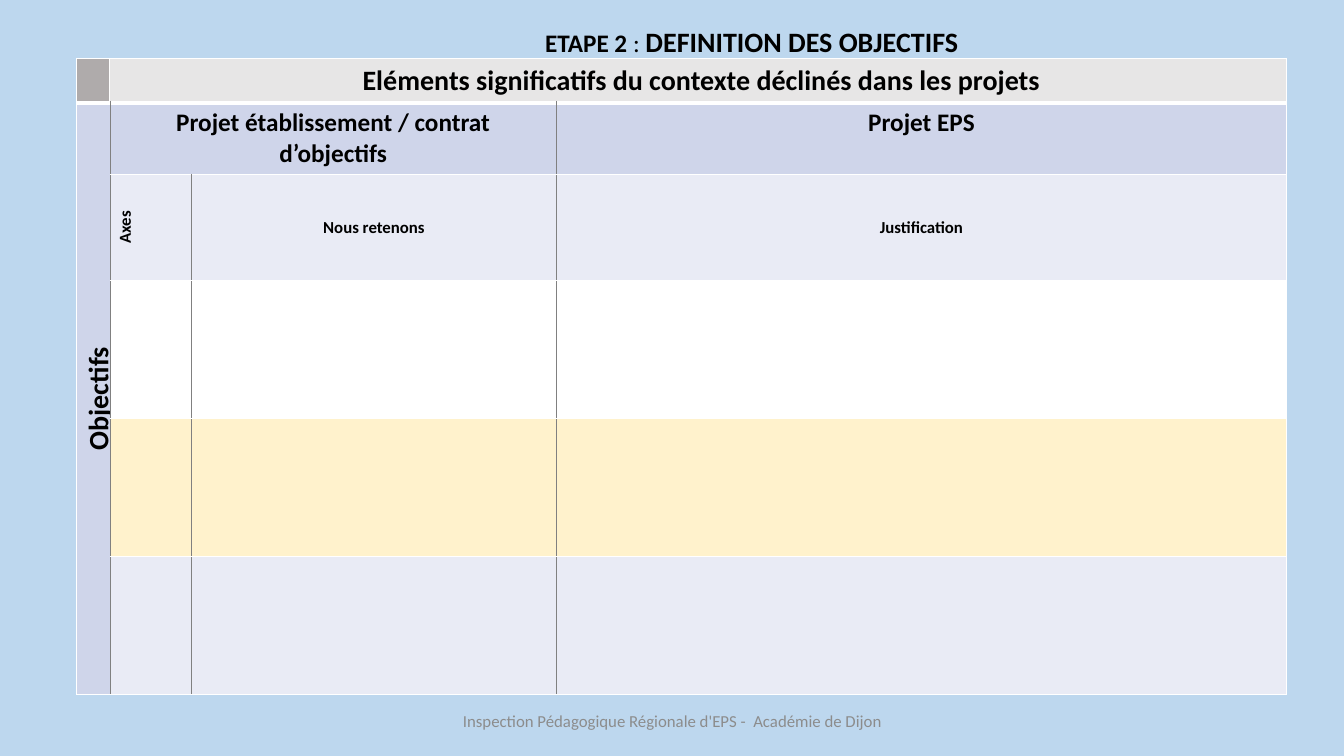
from lxml import etree
from pptx import Presentation
from pptx.dml.color import RGBColor
from pptx.enum.text import MSO_ANCHOR, MSO_AUTO_SIZE, PP_ALIGN
from pptx.oxml.ns import qn
from pptx.util import Inches, Pt

TOP, MIDDLE = MSO_ANCHOR.TOP, MSO_ANCHOR.MIDDLE
LEFT, CENTER = PP_ALIGN.LEFT, PP_ALIGN.CENTER
NO_AUTOFIT = MSO_AUTO_SIZE.NONE
TITLE_ONLY = 5

WHITE, GREY, LAVENDER, PALE, CREAM = "FFFFFF", "808080", "CFD5EA", "E9EBF5", "FFF2CC"
COLUMN_WIDTHS = [0.33, 0.81, 3.62, 7.24]
ROW_HEIGHTS = [0.38, 0.61, 1.05, 1.37, 1.37, 1.37]
ROW_FILLS = ["E7E6E6", LAVENDER, PALE, WHITE, CREAM, PALE]
CORNER_FILL = "AFABAB"
MERGES = [((0, 1), (0, 3)), ((1, 0), (5, 0)), ((1, 1), (1, 2))]
# row, column, text, size, vertical anchor, rotated
LABELS = [
    (0, 1, " Eléments significatifs du contexte déclinés dans les projets", 20, TOP, False),
    (1, 0, "Objectifs", 20, MIDDLE, True),
    (1, 1, "Projet établissement / contrat d’objectifs", 18, TOP, False),
    (1, 3, "Projet EPS", 18, TOP, False),
    (2, 1, "Axes", 12, MIDDLE, True),
    (2, 2, "Nous retenons", 12, MIDDLE, False),
    (2, 3, "Justification", 12, MIDDLE, False),
]


def rgb(value):
    return RGBColor.from_string(value)


def add_span(para, text, size=18, bold=False, color="000000"):
    span = para.add_run()
    span.text = text
    span.font.name = "Calibri"
    span.font.size = Pt(size)
    span.font.bold = bold
    span.font.color.rgb = rgb(color)


def place(shape, left, top, width, height):
    shape.left, shape.top = Inches(left), Inches(top)
    shape.width, shape.height = Inches(width), Inches(height)


def add_border(cell, side, color, width):
    properties = cell._tc.get_or_add_tcPr()
    line = etree.SubElement(properties, qn(f"a:ln{side}"), w=str(Pt(width)))
    fill = etree.SubElement(line, qn("a:solidFill"))
    etree.SubElement(fill, qn("a:srgbClr"), val=color)


def style_cell(cell, row, column):
    """Thin grey lines between body columns, white lines elsewhere."""
    white, grey = (WHITE, 1), (GREY, 0.25)
    last_column = len(COLUMN_WIDTHS) - 1
    add_border(cell, "L", *(white if row == 0 or column == 0 else grey))
    add_border(cell, "R", *(white if row == 0 or column == last_column else grey))
    add_border(cell, "T", *white)
    add_border(cell, "B", WHITE, 3 if row == 0 else 1)
    color = ROW_FILLS[row]
    if column == 0:
        color = CORNER_FILL if row == 0 else LAVENDER
    cell.fill.solid()
    cell.fill.fore_color.rgb = rgb(color)


def add_heading(page, left, top, width, height):
    title = page.shapes.title
    place(title, left, top, width, height)
    frame = title.text_frame
    frame.auto_size = NO_AUTOFIT
    frame.word_wrap = False
    frame.vertical_anchor = TOP
    para = frame.paragraphs[0]
    para.alignment = LEFT
    add_span(para, " ETAPE 2 ", bold=True)
    add_span(para, ": ")
    add_span(para, "DEFINITION DES OBJECTIFS", size=20, bold=True)


def add_objectives_table(page, left, top):
    width, height = sum(COLUMN_WIDTHS), sum(ROW_HEIGHTS)
    table = page.shapes.add_table(
        len(ROW_HEIGHTS), len(COLUMN_WIDTHS),
        Inches(left), Inches(top), Inches(width), Inches(height)).table
    table.first_row = table.horz_banding = False
    for column, size in zip(table.columns, COLUMN_WIDTHS):
        column.width = Inches(size)
    for row, size in zip(table.rows, ROW_HEIGHTS):
        row.height = Inches(size)
    for row in range(len(ROW_HEIGHTS)):
        for column in range(len(COLUMN_WIDTHS)):
            style_cell(table.cell(row, column), row, column)
    for first, last in MERGES:
        table.cell(*first).merge(table.cell(*last))
    for row, column, text, size, anchor, rotated in LABELS:
        cell = table.cell(row, column)
        cell.vertical_anchor = anchor
        if rotated:
            cell._tc.get_or_add_tcPr().set("vert", "vert270")
        para = cell.text_frame.paragraphs[0]
        para.alignment = CENTER
        add_span(para, text, size=size, bold=True)


def add_footer(page, left, top, width, height):
    box = page.shapes.add_textbox(
        Inches(left), Inches(top), Inches(width), Inches(height))
    frame = box.text_frame
    frame.word_wrap = True
    frame.vertical_anchor = MIDDLE
    para = frame.paragraphs[0]
    para.alignment = CENTER
    add_span(para, "Inspection Pédagogique Régionale d'EPS -  Académie de Dijon",
             size=12, color="8C8C8C")


def main():
    deck = Presentation()
    deck.slide_width, deck.slide_height = Inches(13.33), Inches(7.5)
    page = deck.slides.add_slide(deck.slide_layouts[TITLE_ONLY])
    page.background.fill.solid()
    page.background.fill.fore_color.rgb = rgb("BDD7EE")
    add_objectives_table(page, 0.76, 0.58)
    add_heading(page, 5.25, 0.19, 4.4, 0.44)
    add_footer(page, 4.42, 6.95, 4.5, 0.4)
    deck.save("out.pptx")


if __name__ == "__main__":
    main()
